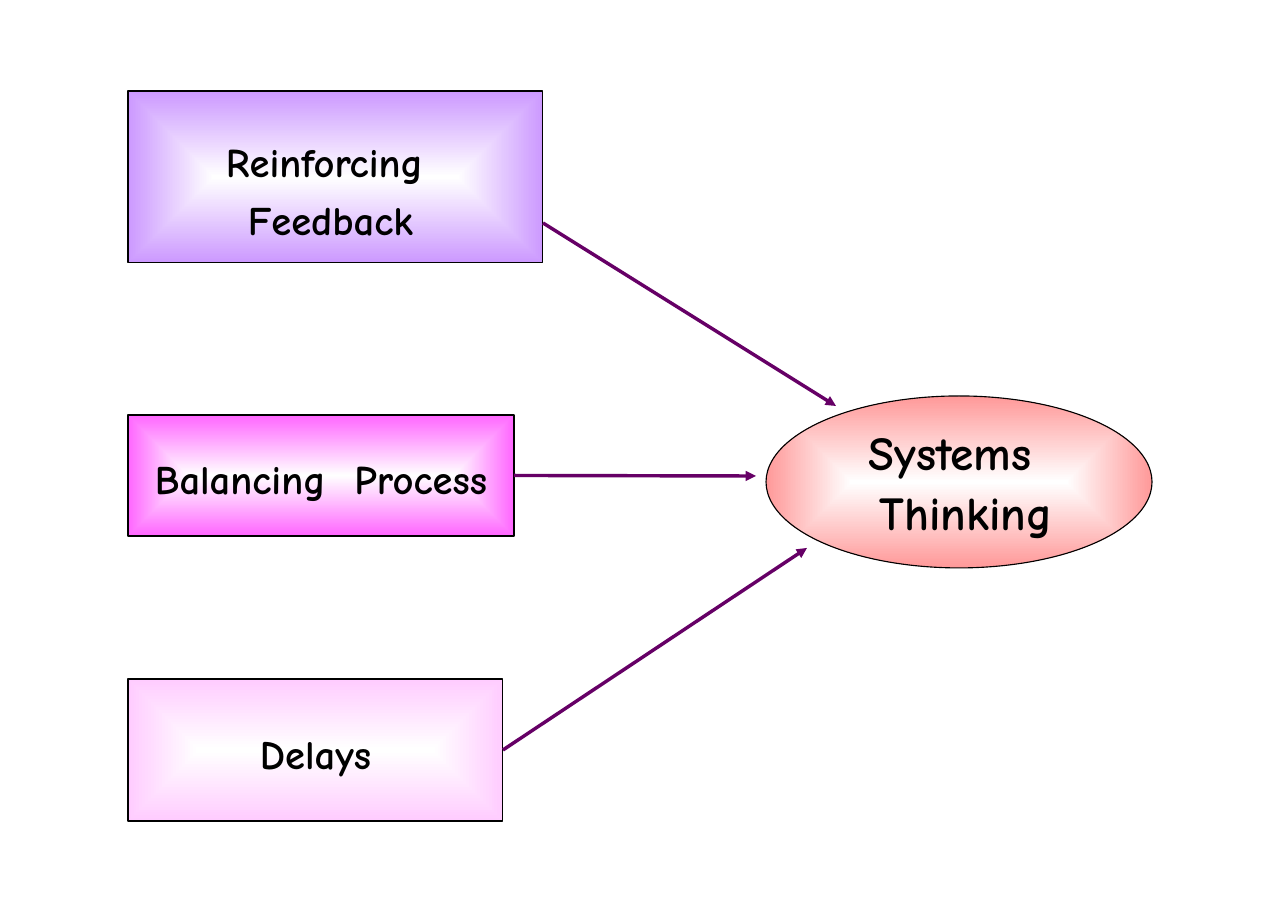
import pptx
import pptx.util
import pptx.dml.color
import pptx.enum.shapes
import pptx.enum.text
import pptx.oxml
import pptx.oxml.ns

PX = 914400 / 110.2
SLIDE = (1288, 912)
FONT = "Comic Neue"
BLACK, WHITE, ARROW = "000000", "FFFFFF", "660066"
RECT = pptx.enum.shapes.MSO_SHAPE.RECTANGLE
OVAL = pptx.enum.shapes.MSO_SHAPE.OVAL

NODES = {
    "systems": dict(kind=OVAL, box=(766, 396, 386, 172), color="FF9999", size=30.9, gap=2,
                    inset=(0, 0, 18, 0), lines=[("Systems", 0), ("Thinking", 32)]),
    "feedback": dict(kind=RECT, box=(128, 91, 415, 172), color="CC99FF", size=26.5, gap=6,
                     inset=(0, 26, 22, 0), lines=[("Reinforcing", 0), ("Feedback", 12)]),
    "balancing": dict(kind=RECT, box=(128, 415, 386, 121), color="FF66FF", size=26.5, gap=0,
                      inset=(0, 6, 0, 0), lines=[("Balancing  Process", 0)]),
    "delays": dict(kind=RECT, box=(128, 679, 375, 142), color="FFCCFF", size=26.5, gap=0,
                   inset=(0, 6, 0, 0), lines=[("Delays", 0)]),
}
ARROWS = [
    ((543, 223), (836, 406), None),
    ((503, 750), (807, 548), "delays"),
    ((514, 476), (756, 476), "balancing"),
]


def px(n):
    return pptx.util.Emu(round(n * PX))


def rgb(color):
    return pptx.dml.color.RGBColor.from_string(color)


def xml(text):
    ns = pptx.oxml.ns.nsdecls("a")
    return pptx.oxml.parse_xml(text.replace("NS", ns, 1))


def fill_from_centre(s, color):
    s.fill.gradient()
    for stop, c in zip(s.fill.gradient_stops, (WHITE, color)):
        stop.color.rgb = rgb(c)
    lin = s._element.spPr.find(".//" + pptx.oxml.ns.qn("a:lin"))
    lin.getparent().replace(lin, xml(
        '<a:path NS path="shape"><a:fillToRect l="50000" t="50000" r="50000" b="50000"/></a:path>'))


def add_node(shapes, kind, box, color, size, gap, inset, lines):
    s = shapes.add_shape(kind, *map(px, box))
    s.shadow.inherit = False
    fill_from_centre(s, color)
    s.line.color.rgb = rgb(BLACK)
    s.line.width = pptx.util.Pt(0.75)
    tf = s.text_frame
    tf.word_wrap = True
    tf.vertical_anchor = pptx.enum.text.MSO_ANCHOR.MIDDLE
    tf.margin_left, tf.margin_top, tf.margin_right, tf.margin_bottom = map(px, inset)
    tf.text = "\n".join(text for text, indent in lines)
    for i, (p, (text, indent)) in enumerate(zip(tf.paragraphs, lines)):
        p.alignment = pptx.enum.text.PP_ALIGN.CENTER
        p.space_before = pptx.util.Pt(gap if i else 0)
        if indent:
            p._p.get_or_add_pPr().set("marL", str(px(indent)))
        font = p.runs[0].font
        font.name, font.size, font.bold = FONT, pptx.util.Pt(size), True
        font.color.rgb = rgb(BLACK)
    return s


def add_arrow(shapes, start, end, source):
    s = shapes.add_connector(pptx.enum.shapes.MSO_CONNECTOR.STRAIGHT, *map(px, start + end))
    if source:
        s.begin_connect(source, 3)
    s.line.color.rgb = rgb(ARROW)
    s.line.width = pptx.util.Pt(2.25)
    s.line._get_or_add_ln().append(xml('<a:tailEnd NS type="triangle"/>'))
    s._element.spPr.append(xml("<a:effectLst NS/>"))


def main():
    prs = pptx.Presentation()
    prs.slide_width, prs.slide_height = map(px, SLIDE)
    shapes = prs.slides.add_slide(prs.slide_layouts[6]).shapes
    nodes = {name: add_node(shapes, **node) for name, node in NODES.items()}
    for start, end, source in ARROWS:
        add_arrow(shapes, start, end, nodes.get(source))
    prs.save("out.pptx")


if __name__ == "__main__":
    main()
